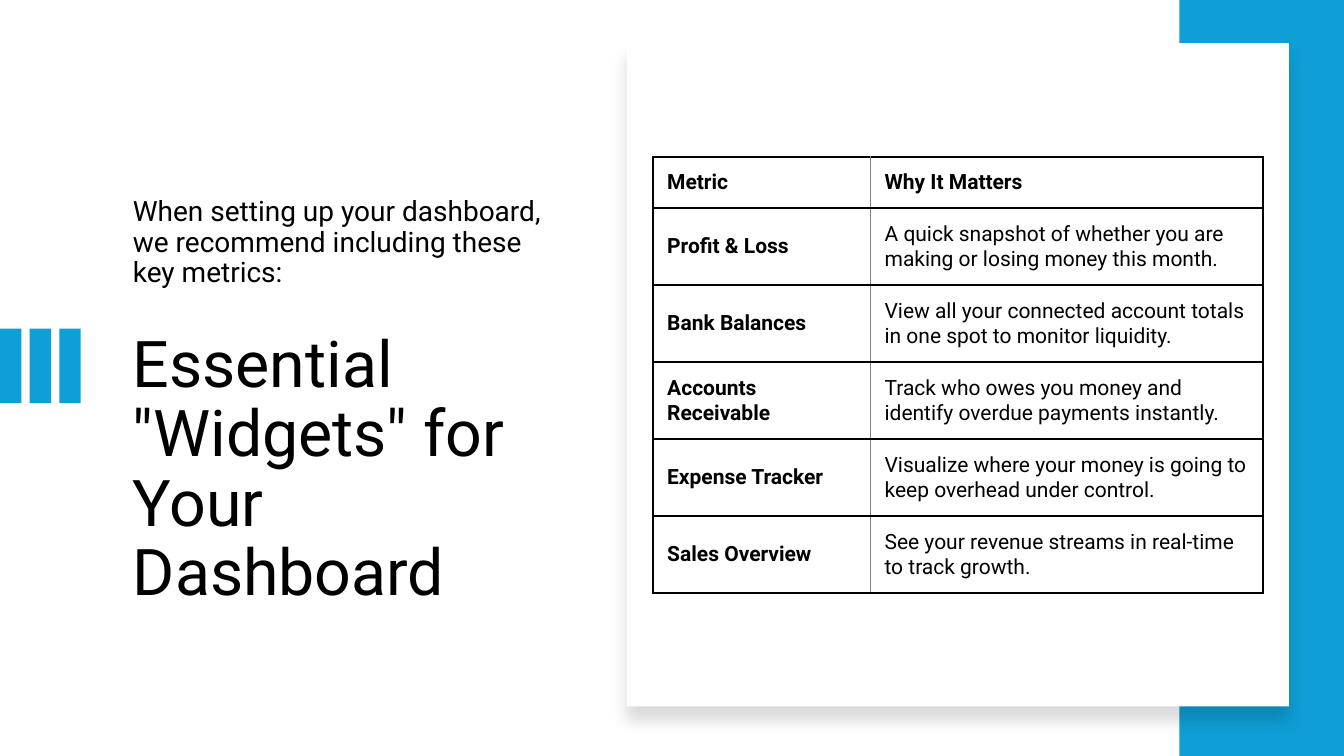
"""Build the dashboard widgets slide with its metrics table."""
from dataclasses import dataclass

from lxml.etree import SubElement
from pptx import Presentation
from pptx.dml.color import RGBColor
from pptx.enum.shapes import MSO_SHAPE
from pptx.enum.text import MSO_ANCHOR as Anchor
from pptx.oxml.ns import qn
from pptx.shapes.autoshape import Shape
from pptx.slide import Slide
from pptx.table import _Cell as Cell
from pptx.util import Pt

BLACK, WHITE, BLUE, GREY = "000000", "FFFFFF", "0F9ED5", "808080"
FONT = "Roboto"


@dataclass
class Frame:
    left: float
    top: float
    width: float
    height: float

    def lengths(self) -> list[Pt]:
        return [Pt(v) for v in (self.left, self.top, self.width, self.height)]


@dataclass
class Block:
    frame: Frame
    text: str
    size: float
    anchor: Anchor


@dataclass
class Panel:
    frame: Frame
    fill: str


@dataclass
class Metric:
    name: str
    reason: str


BLOCKS = [
    Block(Frame(87.8, 233.3, 317.5, 187.9), 'Essential "Widgets" for Your Dashboard', 46, Anchor.TOP),
    Block(
        Frame(87.8, 74.9, 317.5, 134.6),
        "When setting up your dashboard, we recommend including these key metrics:",
        20,
        Anchor.BOTTOM,
    ),
]
BARS = [Panel(Frame(21.2 * i, 234.8, 15.3, 53.2), BLUE) for i in range(3)]
SIDE_BAND = Panel(Frame(842.4, 0, 117.6, 540), BLUE)
CARD = Panel(Frame(447.8, 30.8, 473, 473.8), WHITE)
TABLE_FRAME = Frame(466.6, 112.2, 435.6, 311.5)
COLUMN_WIDTHS = [155.3, 280.3]
HEADER_HEIGHT, ROW_HEIGHT = 36.5, 55
METRICS = [
    Metric("Metric", "Why It Matters"),
    Metric("Profit & Loss", "A quick snapshot of whether you are making or losing money this month."),
    Metric("Bank Balances", "View all your connected account totals in one spot to monitor liquidity."),
    Metric("Accounts Receivable", "Track who owes you money and identify overdue payments instantly."),
    Metric("Expense Tracker", "Visualize where your money is going to keep overhead under control."),
    Metric("Sales Overview", "See your revenue streams in real-time to track growth."),
]


def color(value: str) -> RGBColor:
    return RGBColor.from_string(value)


def apply(target: object, values: dict) -> None:
    for name, value in values.items():
        setattr(target, name, value)


def write(para, text: str, size: float, bold: bool = False) -> None:
    span = para.add_run()
    span.text = text
    apply(span.font, {"name": FONT, "size": Pt(size), "bold": bold})
    span.font.color.rgb = color(BLACK)


def add_block(page: Slide, block: Block) -> None:
    box = page.shapes.add_textbox(*block.frame.lengths()).text_frame
    apply(box, {"word_wrap": True, "vertical_anchor": block.anchor})
    para = box.paragraphs[0]
    para.line_spacing = 0.9
    write(para, block.text, block.size)


def add_panel(page: Slide, panel: Panel) -> Shape:
    shape = page.shapes.add_shape(MSO_SHAPE.RECTANGLE, *panel.frame.lengths())
    shape.shadow.inherit = False
    shape.fill.solid()
    shape.fill.fore_color.rgb = color(panel.fill)
    shape.line.fill.background()
    return shape


def add_shadow(shape: Shape) -> None:
    effects = shape._element.spPr.find(qn("a:effectLst"))
    shadow = SubElement(
        effects, qn("a:outerShdw"), blurRad=str(Pt(11)), dist=str(Pt(10)), dir="5400000", algn="t", rotWithShape="0"
    )
    tint = SubElement(shadow, qn("a:srgbClr"), val=BLACK)
    SubElement(tint, qn("a:alpha"), val="15000")


def add_border(cell: Cell, side: str, stroke: str, width: float) -> None:
    line = SubElement(cell._tc.get_or_add_tcPr(), qn(f"a:ln{side}"), w=str(Pt(width)))
    SubElement(SubElement(line, qn("a:solidFill")), qn("a:srgbClr"), val=stroke)
    SubElement(line, qn("a:prstDash"), val="solid")


def fill_cell(cell: Cell, text: str, bold: bool, inner_side: str) -> None:
    apply(
        cell,
        {
            "vertical_anchor": Anchor.MIDDLE,
            "margin_left": Pt(10),
            "margin_right": Pt(8),
            "margin_top": Pt(8),
            "margin_bottom": Pt(8),
        },
    )
    for side in "LRTB":
        inner = side == inner_side
        add_border(cell, side, GREY if inner else BLACK, 0.5 if inner else 1.5)
    cell.fill.background()
    write(cell.text_frame.paragraphs[0], text, 15, bold)


def add_metrics(page: Slide) -> None:
    table = page.shapes.add_table(len(METRICS), len(COLUMN_WIDTHS), *TABLE_FRAME.lengths()).table
    apply(table, {"first_row": False, "horz_banding": False})
    for column, width in zip(table.columns, COLUMN_WIDTHS):
        column.width = Pt(width)
    for index, metric in enumerate(METRICS):
        header = index == 0
        table.rows[index].height = Pt(HEADER_HEIGHT if header else ROW_HEIGHT)
        fill_cell(table.cell(index, 0), metric.name, True, "R")
        fill_cell(table.cell(index, 1), metric.reason, header, "L")


def main() -> None:
    deck = Presentation()
    apply(deck, {"slide_width": Pt(960), "slide_height": Pt(540)})
    page = deck.slides.add_slide(deck.slide_layouts[6])
    for block in BLOCKS:
        add_block(page, block)
    for panel in [*BARS, SIDE_BAND]:
        add_panel(page, panel)
    add_shadow(add_panel(page, CARD))
    add_metrics(page)
    deck.save("out.pptx")


if __name__ == "__main__":
    main()
